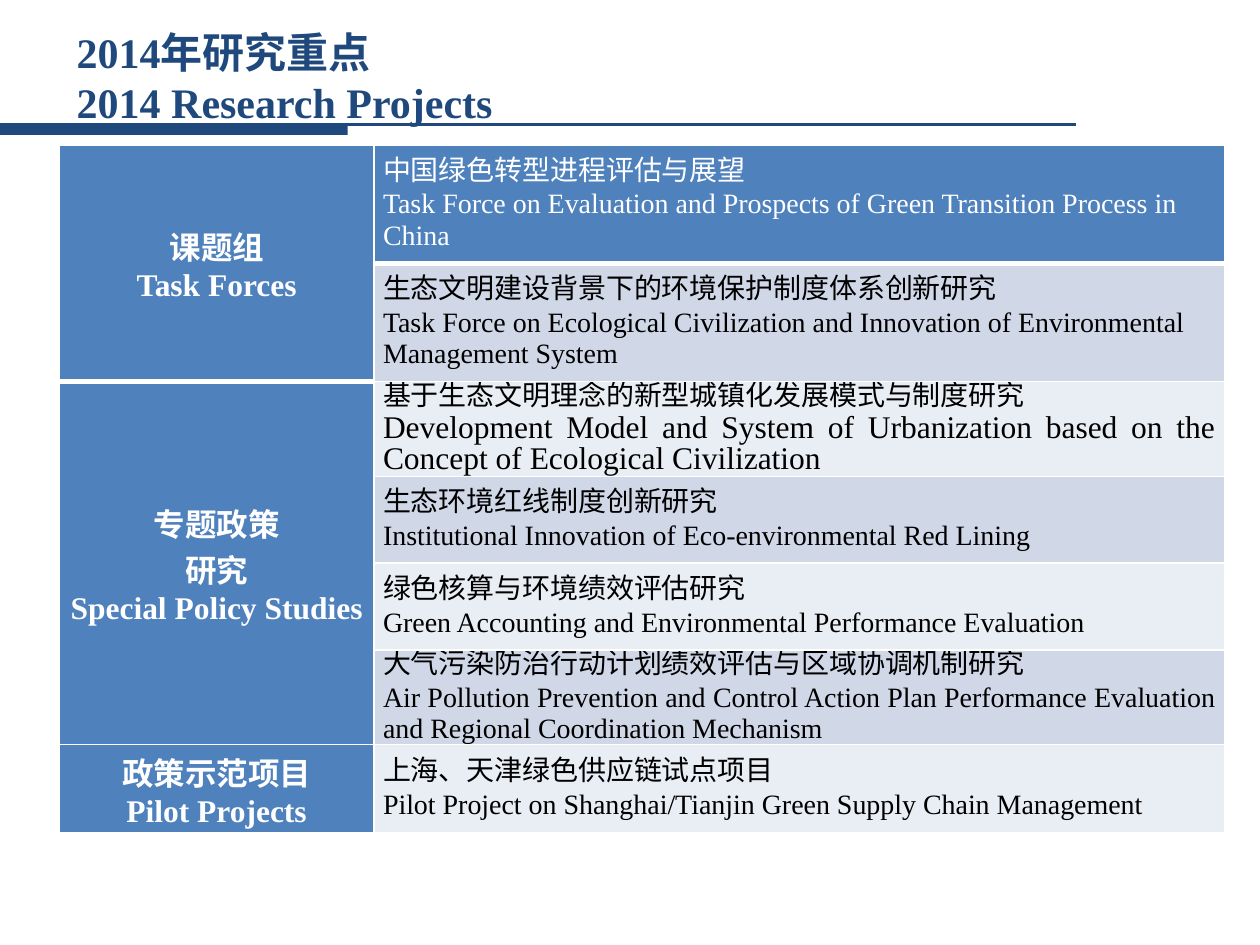
from lxml.etree import SubElement
from pptx import Presentation
from pptx.dml.color import RGBColor
from pptx.enum.shapes import MSO_CONNECTOR as Connector, MSO_SHAPE as Shape
from pptx.enum.text import MSO_ANCHOR as Anchor, PP_ALIGN as Align
from pptx.oxml.ns import qn
from pptx.util import Inches, Pt

NAVY = RGBColor(0x1F, 0x49, 0x7D)
BLUE = RGBColor(0x4F, 0x81, 0xBD)
BAND_DARK = RGBColor(0xD0, 0xD8, 0xE8)
BAND_LIGHT = RGBColor(0xE9, 0xED, 0xF4)
WHITE = RGBColor(0xFF, 0xFF, 0xFF)
BLACK = RGBColor(0, 0, 0)

COLUMN_WIDTHS = [2.5, 6.75]
ROW_HEIGHTS = [0.94, 0.94, 0.69, 0.69, 0.69, 0.69, 0.7]

# First row, last row, lines of each category
CATEGORIES = [
    (0, 1, ["课题组", "Task Forces"]),
    (2, 5, ["专题政策", "研究", "Special Policy Studies"]),
    (6, 6, ["政策示范项目", "Pilot Projects"]),
]
# Chinese title, English title, size of the English title
PROJECTS = [
    ("中国绿色转型进程评估与展望",
     "Task Force on Evaluation and Prospects of Green Transition Process in China", 16),
    ("生态文明建设背景下的环境保护制度体系创新研究",
     "Task Force on Ecological Civilization and Innovation of Environmental "
     "Management System", 16),
    ("基于生态文明理念的新型城镇化发展模式与制度研究",
     "Development Model and System of Urbanization based on the Concept of "
     "Ecological Civilization", 18),
    ("生态环境红线制度创新研究",
     "Institutional Innovation of Eco-environmental Red Lining", 16),
    ("绿色核算与环境绩效评估研究",
     "Green Accounting and Environmental Performance Evaluation", 16),
    ("大气污染防治行动计划绩效评估与区域协调机制研究",
     "Air Pollution Prevention and Control Action Plan Performance Evaluation "
     "and Regional Coordination Mechanism", 16),
    ("上海、天津绿色供应链试点项目",
     "Pilot Project on Shanghai/Tianjin Green Supply Chain Management", 16),
]
# Cell edges drawn at 3 pt, as (row, column, edge)
HEAVY_EDGES = {(0, 0, "B"), (1, 0, "B"), (2, 0, "T"), (0, 1, "B"), (1, 1, "T")}


def write_lines(frame, lines, color, bold, **layout):
    """Fill a text frame with (text, size) lines, one paragraph each."""
    frame.word_wrap = True
    frame.vertical_anchor = Anchor.MIDDLE
    for index, (text, size) in enumerate(lines):
        para = frame.add_paragraph() if index else frame.paragraphs[0]
        for name, value in layout.items():
            setattr(para, name, value)
        span = para.add_run()
        span.text = text
        style = {"name": "Times New Roman", "size": Pt(size), "bold": bold}
        for name, value in style.items():
            setattr(span.font, name, value)
        span.font.color.rgb = color


deck = Presentation()
deck.slide_width, deck.slide_height = Inches(10), Inches(7.5)
page = deck.slides.add_slide(deck.slide_layouts[6])

# Title rule
rule_y = Inches(0.99)
rule = page.shapes.add_connector(Connector.STRAIGHT, 0, rule_y, Inches(8.54), rule_y)
rule.line.color.rgb = NAVY
rule.line.width = Pt(1.5)
SubElement(rule.element.spPr, qn("a:effectLst"))
bar = page.shapes.add_shape(Shape.RECTANGLE, 0, rule_y, Inches(2.76), Inches(0.08))
bar.shadow.inherit = False
bar.fill.solid()
bar.fill.fore_color.rgb = NAVY
bar.line.fill.background()

# Title
title = page.shapes.add_textbox(Inches(0.51), Inches(0.3), Inches(7.32), Inches(0.62))
write_lines(title.text_frame, [("2014年研究重点", 24), ("2014 Research Projects", 24)],
            NAVY, True)

# Project table
table = page.shapes.add_table(
    len(ROW_HEIGHTS), len(COLUMN_WIDTHS), Inches(0.47), Inches(1.15),
    Inches(sum(COLUMN_WIDTHS)), Inches(sum(ROW_HEIGHTS))).table
for column, width in zip(table.columns, COLUMN_WIDTHS):
    column.width = Inches(width)
for row, height in zip(table.rows, ROW_HEIGHTS):
    row.height = Inches(height)

for r in range(len(ROW_HEIGHTS)):
    for c in range(len(COLUMN_WIDTHS)):
        cell = table.cell(r, c)
        cell.margin_left = cell.margin_right = Inches(0.07)
        cell.margin_top = cell.margin_bottom = 0
        cell.vertical_anchor = Anchor.MIDDLE
        properties = cell._tc.get_or_add_tcPr()
        for edge in "LRTB":
            width = Pt(3 if (r, c, edge) in HEAVY_EDGES else 1)
            line = SubElement(properties, qn(f"a:ln{edge}"), w=str(width))
            fill = SubElement(line, qn("a:solidFill"))
            SubElement(fill, qn("a:srgbClr"), val=str(WHITE))
        cell.fill.solid()
        band = BAND_DARK if r % 2 else BAND_LIGHT
        cell.fill.fore_color.rgb = BLUE if c == 0 or r == 0 else band

for first, last, lines in CATEGORIES:
    cell = table.cell(first, 0)
    if last > first:
        cell.merge(table.cell(last, 0))
    write_lines(cell.text_frame, [(text, 18) for text in lines], WHITE, True,
                alignment=Align.CENTER)

for r, (chinese, english, size) in enumerate(PROJECTS):
    write_lines(table.cell(r, 1).text_frame, [(chinese, 16), (english, size)],
                BLACK if r else WHITE, False, line_spacing=Pt(18),
                alignment=Align.LEFT if r < 2 else Align.JUSTIFY)

deck.save("out.pptx")
